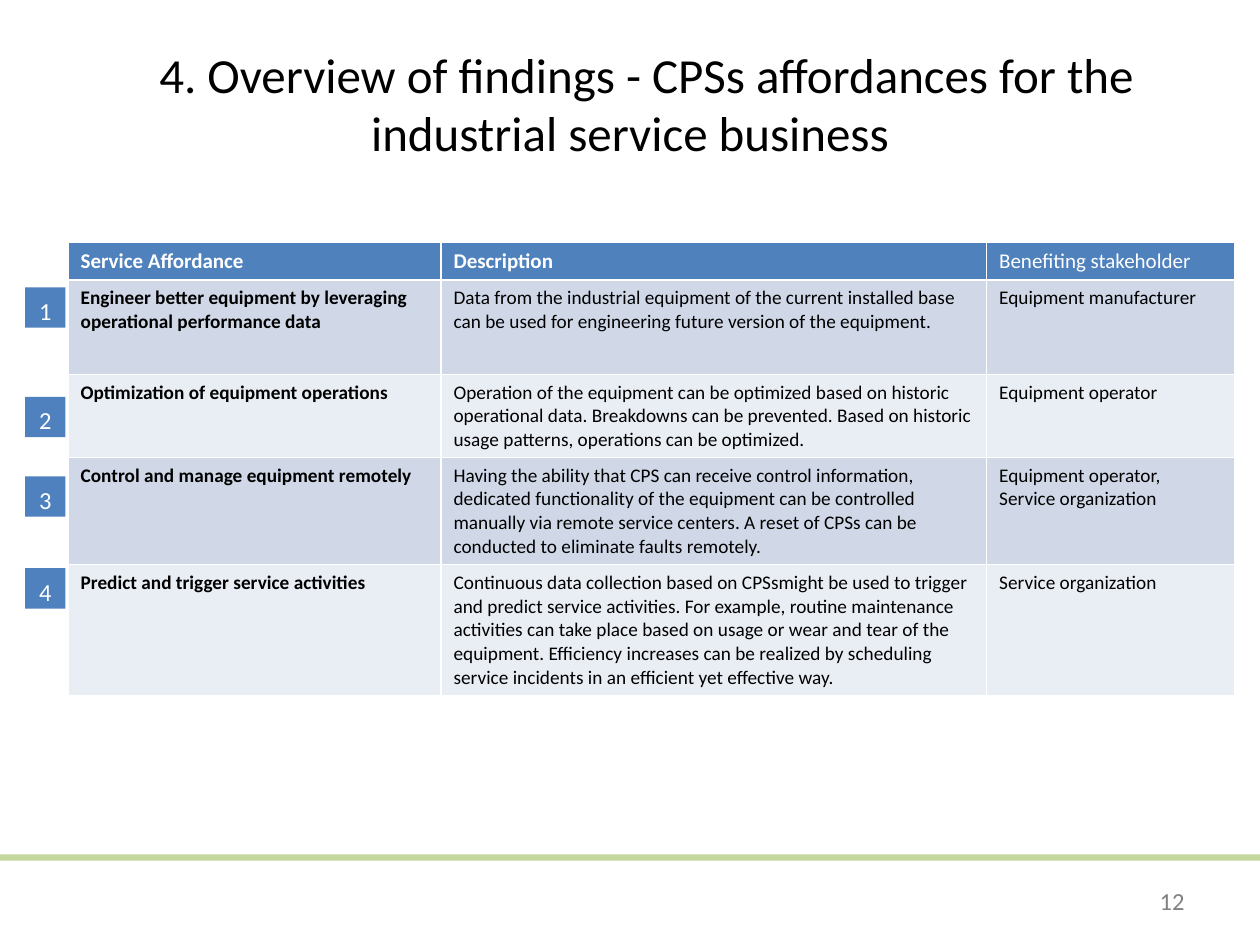
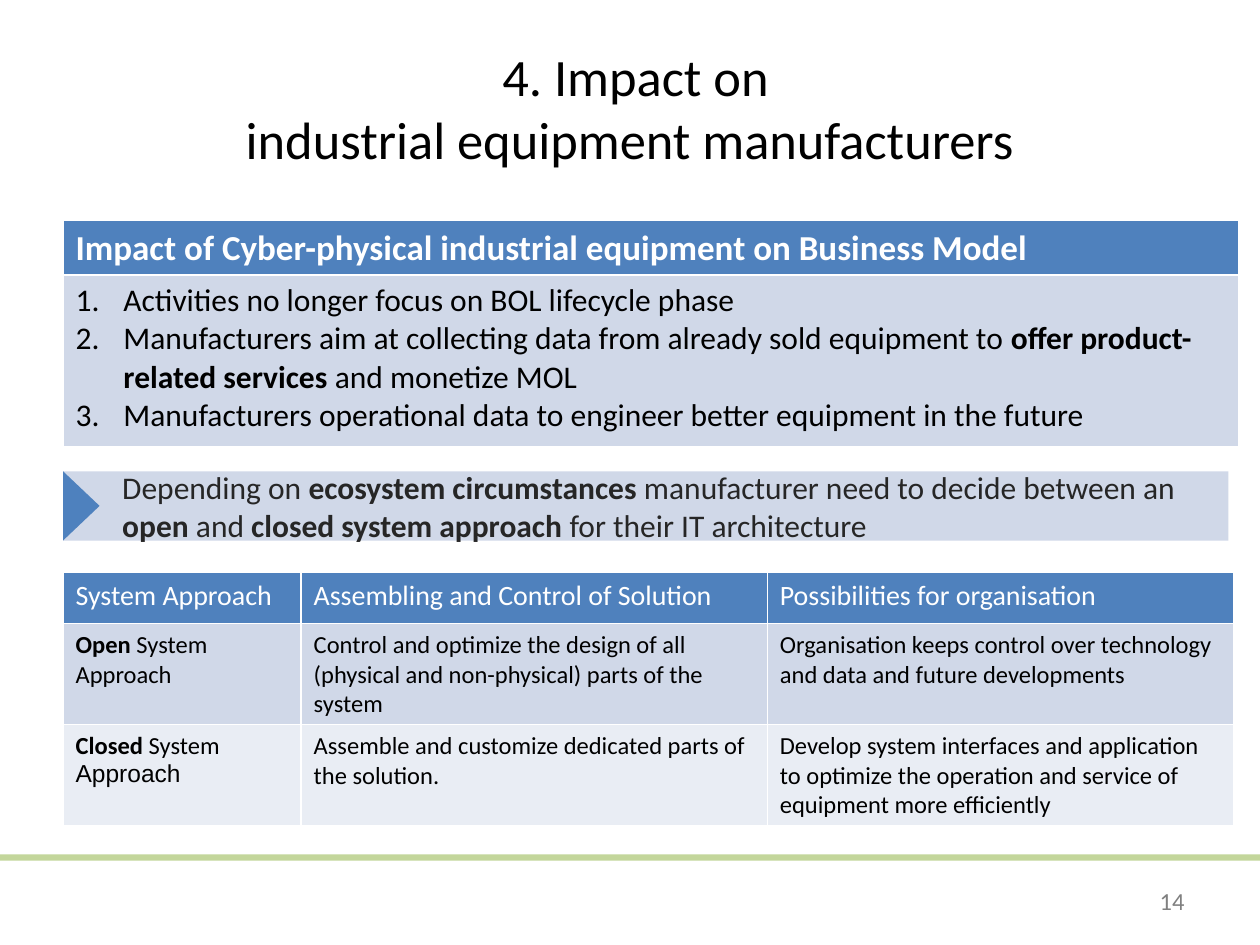
"""Build two slides on cyber-physical systems in the industrial service business."""
from dataclasses import dataclass

from lxml import etree
from pptx import Presentation
from pptx import util as u
from pptx.dml.color import RGBColor
from pptx.enum import shapes, text
from pptx.oxml.ns import qn


@dataclass
class Theme:
    font: str = "Calibri"
    alt_font: str = "Arial"
    black: str = "000000"
    white: str = "FFFFFF"
    dark: str = "262626"
    grey: str = "808080"
    green: str = "C3D69B"
    head: str = "4F81BD"
    accent: str = "4E81BE"
    bands: tuple = ("D0D8E8", "E9EDF4")
    titles: tuple = (28, 30)
    lead: int = 20
    body: int = 18
    column: int = 16
    small: int = 14
    grid_head: int = 12
    grid: int = 11


def write(tf, content, size, color, align=None, numbered=False):
    """Write one paragraph per line, with *starred* parts in bold."""
    for i, line in enumerate(content.split("\n")):
        p = tf.paragraphs[0] if i == 0 else tf.add_paragraph()
        p.alignment = align
        if numbered:
            pPr = p._p.get_or_add_pPr()
            pPr.set("marL", str(u.Inches(0.38)))
            pPr.set("indent", str(u.Inches(-0.38)))
            etree.SubElement(pPr, qn("a:buFont"), typeface="+mj-lt")
            etree.SubElement(pPr, qn("a:buAutoNum"), type="arabicPeriod")
        for j, part in enumerate(line.split("*")):
            if part:
                r = p.add_run()
                r.text = part
                r.font.name, r.font.size = T.font, u.Pt(size)
                r.font.bold = j % 2 == 1
                r.font.color.rgb = RGBColor.from_string(color)


def add_grid(s, left, top, widths, heights, rows, head_size, size, numbered=False):
    """Add a table with a dark header, banded rows and white rules."""
    frame = s.shapes.add_table(len(rows), len(widths), u.Inches(left), u.Inches(top),
                               u.Inches(sum(widths)), u.Inches(sum(heights)))
    table = frame.table
    for column, width in zip(table.columns, widths):
        column.width = u.Inches(width)
    for i, (row, height) in enumerate(zip(rows, heights)):
        table.rows[i].height = u.Inches(height)
        for j, content in enumerate(row):
            cell = table.cell(i, j)
            tcPr = cell._tc.get_or_add_tcPr()
            for side in ("lnL", "lnR", "lnT", "lnB"):
                ln = etree.SubElement(tcPr, qn(f"a:{side}"), w=str(u.Pt(1)))
                fill = etree.SubElement(ln, qn("a:solidFill"))
                etree.SubElement(fill, qn("a:srgbClr"), val=T.white)
            cell.fill.solid()
            cell.fill.fore_color.rgb = RGBColor.from_string(
                T.bands[(i - 1) % 2] if i else T.head)
            write(cell.text_frame, content, size if i else head_size,
                  T.black if i else T.white, numbered=numbered and i > 0)
    return table


T = Theme()
prs = Presentation()
prs.slide_width, prs.slide_height = u.Inches(10), u.Inches(7.5)
layout = prs.slide_layouts[5]

pages = [
    ("4. Overview of findings - CPSs affordances for the industrial service business", 0.26, "12"),
    ("4. Impact on\vindustrial equipment manufacturers", 0.09, "14"),
]
slides = []
for (title, indent, number), size in zip(pages, T.titles):
    s = prs.slides.add_slide(layout)
    slides.append(s)
    sp = s.shapes.title
    sp.left, sp.top, sp.width, sp.height = [u.Inches(v) for v in (0.5, 0.3, 9, 1.25)]
    tf = sp.text_frame
    tf.text = title
    tf.auto_size = text.MSO_AUTO_SIZE.NONE
    tf.vertical_anchor = text.MSO_ANCHOR.TOP
    p = tf.paragraphs[0]
    p.alignment = text.PP_ALIGN.CENTER
    p._p.get_or_add_pPr().set("indent", str(u.Inches(indent)))
    for r in p.runs:
        r.font.name, r.font.size = T.font, u.Pt(size)
        r.font.color.rgb = RGBColor.from_string(T.black)

    sp = s.shapes.add_textbox(u.Inches(7.17), u.Inches(6.95), u.Inches(2.33), u.Inches(0.4))
    sp.text_frame.word_wrap = True
    sp.text_frame.vertical_anchor = text.MSO_ANCHOR.MIDDLE
    write(sp.text_frame, number, T.small, T.grey, text.PP_ALIGN.RIGHT)

findings, impact = slides

band = findings.shapes.add_shape(shapes.MSO_SHAPE.RECTANGLE, 0, u.Inches(6.78),
                                 prs.slide_width, u.Inches(0.05))
band.shadow.inherit = False
band.fill.solid()
band.fill.fore_color.rgb = RGBColor.from_string(T.green)
band.line.fill.background()
prs.slide_master.shapes.element.append(band.element)

affordances = [
    ("*Service Affordance*", "*Description*", "Benefiting stakeholder"),
    ("*Engineer better equipment by leveraging operational performance data*",
     "Data from the industrial equipment of the current installed base can be used for "
     "engineering future version of the equipment.",
     "Equipment manufacturer"),
    ("*Optimization of equipment operations*",
     "Operation of the equipment can be optimized based on historic operational data. "
     "Breakdowns can be prevented. Based on historic usage patterns, operations can be "
     "optimized.",
     "Equipment operator"),
    ("*Control and manage equipment remotely*",
     "Having the ability that CPS can receive control information, dedicated functionality "
     "of the equipment can be controlled manually via remote service centers. A reset of "
     "CPSs can be conducted to eliminate faults remotely.",
     "Equipment operator,\nService organization"),
    ("*Predict and trigger service activities*",
     "Continuous data collection based on CPSsmight be used to trigger and predict service "
     "activities. For example, routine maintenance activities can take place based on usage "
     "or wear and tear of the equipment. Efficiency increases can be realized by scheduling "
     "service incidents in an efficient yet effective way.",
     "Service organization"),
]
add_grid(findings, 0.54, 1.92, (2.96, 4.33, 1.97), (0.3, 0.75, 0.66, 0.85, 1.04),
         affordances, T.grid_head, T.grid)

for number, top in enumerate((2.28, 3.15, 3.78, 4.51), 1):
    badge = findings.shapes.add_shape(shapes.MSO_SHAPE.RECTANGLE, u.Inches(0.2),
                                      u.Inches(top), u.Inches(0.32), u.Inches(0.32))
    badge.shadow.inherit = False
    badge.fill.solid()
    badge.fill.fore_color.rgb = RGBColor.from_string(T.accent)
    badge.line.fill.background()
    tf = badge.text_frame
    tf.margin_left = tf.margin_right = tf.margin_top = tf.margin_bottom = u.Inches(0.08)
    tf.word_wrap = False
    tf.vertical_anchor = text.MSO_ANCHOR.MIDDLE
    write(tf, str(number), T.small, T.white, text.PP_ALIGN.CENTER)
    tf.paragraphs[0].line_spacing = 1.2

business_model = [
    ("*Impact of Cyber-physical industrial equipment on Business Model*",),
    ("Activities no longer focus on BOL lifecycle phase\n"
     "Manufacturers aim at collecting data from already sold equipment to "
     "*offer product-related services *and monetize MOL\n"
     "Manufacturers operational data to engineer better equipment in the future",),
]
add_grid(impact, 0.5, 1.75, (9.33,), (0.43, 1.36), business_model, T.lead, T.body,
         numbered=True)

banner = impact.shapes.add_shape(shapes.MSO_SHAPE.RECTANGLE, u.Inches(0.5), u.Inches(3.74),
                                 u.Inches(9.25), u.Inches(0.55))
pointer = impact.shapes.add_shape(shapes.MSO_SHAPE.ISOSCELES_TRIANGLE, u.Inches(0.37),
                                  u.Inches(3.87), u.Inches(0.55), u.Inches(0.29))
pointer.rotation = 90
for sp, color in ((banner, T.bands[0]), (pointer, T.accent)):
    sp.shadow.inherit = False
    sp.fill.solid()
    sp.fill.fore_color.rgb = RGBColor.from_string(color)
    sp.line.fill.background()
tf = banner.text_frame
tf.margin_left = u.Inches(0.47)
tf.word_wrap = True
tf.vertical_anchor = text.MSO_ANCHOR.MIDDLE
write(tf, "Depending on *ecosystem circumstances *manufacturer need to decide between an "
      "*open *and* closed system approach *for their IT architecture",
      T.body, T.dark, text.PP_ALIGN.LEFT)

approaches = [
    ("System Approach", "Assembling and Control of Solution", "Possibilities for organisation"),
    ("*Open* System Approach",
     "Control and optimize the design of all (physical and non-physical) parts of the system",
     "Organisation keeps control over technology and data and future developments"),
    ("*Closed* System **Approach",
     "Assemble and customize dedicated parts of the solution.",
     "Develop system interfaces and application to optimize the operation and service of "
     "equipment more efficiently"),
]
table = add_grid(impact, 0.5, 4.54, (1.89, 3.7, 3.7), (0.41, 0.8, 0.8), approaches,
                 T.column, T.small)
table.cell(2, 0).text_frame.paragraphs[0].runs[-1].font.name = T.alt_font

prs.save("out.pptx")
